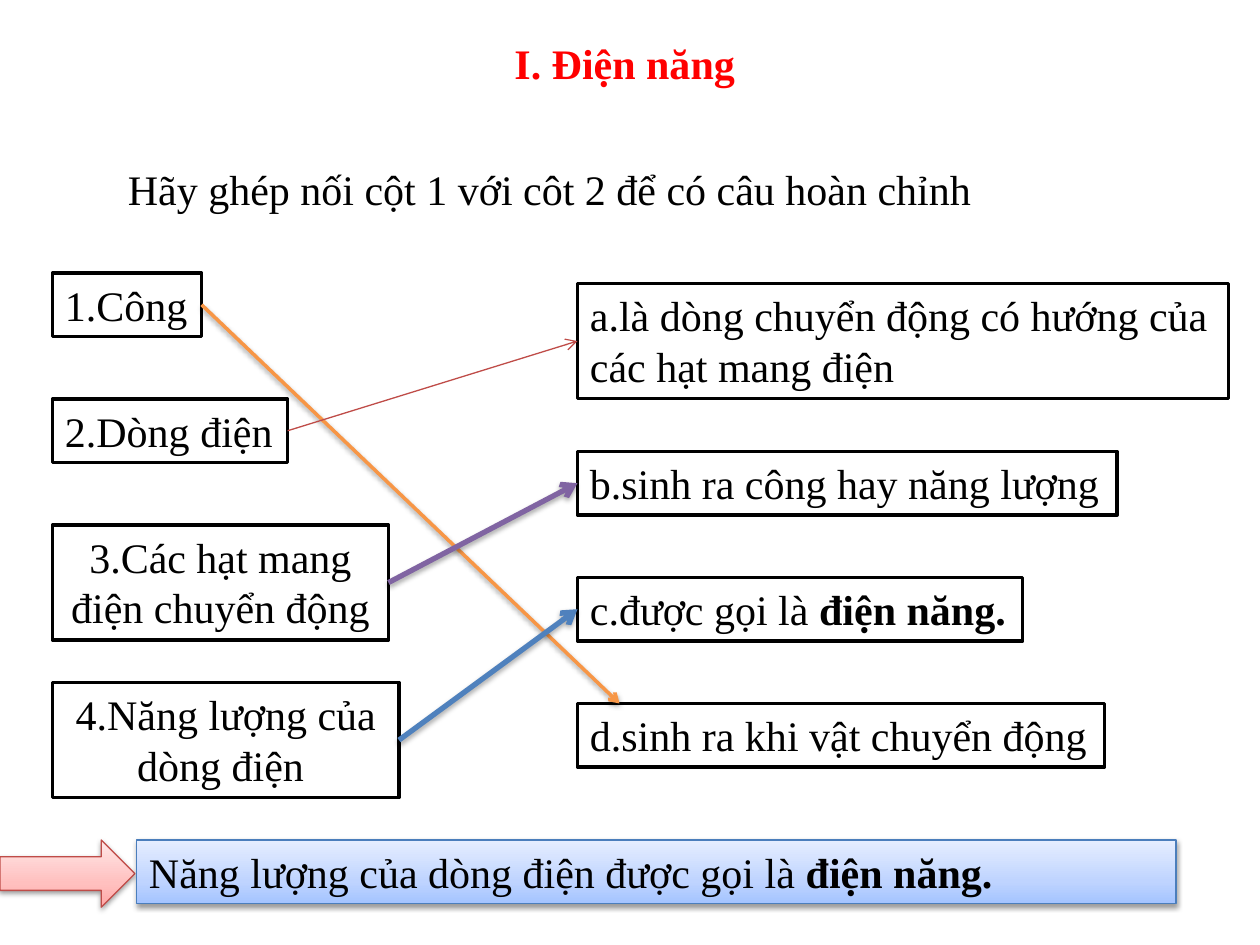
from lxml import etree
from pptx import Presentation
from pptx.dml.color import RGBColor
from pptx.enum.shapes import MSO_CONNECTOR, MSO_SHAPE
from pptx.enum.text import MSO_ANCHOR, MSO_AUTO_SIZE, PP_ALIGN
from pptx.oxml import parse_xml
from pptx.oxml.ns import nsdecls, qn
from pptx.util import Inches, Pt

RECTANGLE, RIGHT_ARROW = MSO_SHAPE.RECTANGLE, MSO_SHAPE.RIGHT_ARROW
STRAIGHT = MSO_CONNECTOR.STRAIGHT
LEFT, CENTER = PP_ALIGN.LEFT, PP_ALIGN.CENTER
TOP, GROW = MSO_ANCHOR.TOP, MSO_AUTO_SIZE.SHAPE_TO_FIT_TEXT
LEFT_SIDE, RIGHT_SIDE = 1, 3

THEME = {
    "font": "Times New Roman", "size": Pt(24),
    "text": RGBColor.from_string("000000"),
    "title": RGBColor.from_string("FF0000"),
    "paper": RGBColor.from_string("FFFFFF"),
    "red": RGBColor.from_string("BF4C48"),
    "blue_edge": RGBColor.from_string("4B7EBC"),
    "orange": RGBColor.from_string("F79646"),
    "purple": RGBColor.from_string("8064A2"),
    "blue": RGBColor.from_string("4F81BD"),
    "red_fade": ("FFA6A5", "FFC0BF", "FFE7E7"),
    "blue_fade": ("A4C4FF", "BFD4FF", "E6EEFF"),
}

deck = Presentation()
deck.slide_width, deck.slide_height = Inches(10), Inches(7.5)
page = deck.slides.add_slide(deck.slide_layouts[6])
UNIT = deck.slide_width // 120  # grid of 120 columns by 90 rows
ONE_LINE, TWO_LINES = 6.05, 10.97  # box heights in rows


def write(box, text, bold_text="", align=LEFT, wrap=True, color=THEME["text"], bold=None):
    frame = box.text_frame
    frame.word_wrap, frame.auto_size, frame.vertical_anchor = wrap, GROW, TOP
    para = frame.paragraphs[0]
    para.alignment = align
    para.font.name, para.font.size = THEME["font"], THEME["size"]
    para.font.color.rgb, para.font.bold = color, bold
    para.add_run().text = text
    if bold_text:
        span = para.add_run()
        span.text, span.font.bold = bold_text, True


def set_shadow(shape, opacity=0, distance=1.6):
    """Give the shape a soft shadow below it, or none at zero opacity."""
    properties = shape._element.spPr
    effects = etree.SubElement(properties, qn("a:effectLst"))
    if opacity:
        effects.append(parse_xml(
            f'<a:outerShdw {nsdecls("a")} blurRad="{Pt(3.1)}" dist="{Pt(distance)}" '
            f'dir="5400000" rotWithShape="0"><a:srgbClr val="000000">'
            f'<a:alpha val="{opacity * 1000}"/></a:srgbClr></a:outerShdw>'))


# Title and task
title = page.shapes.add_textbox(33 * UNIT, 3 * UNIT, 54 * UNIT, 6 * UNIT)
write(title, "I. Điện năng ", align=CENTER, color=THEME["title"], bold=True)
task = page.shapes.add_textbox(11 * UNIT, 15 * UNIT, int(83.4 * UNIT), 6 * UNIT)
write(task, "Hãy ghép nối cột 1 với côt 2 để có câu hoàn chỉnh", wrap=False)

# Two columns of boxes to match: key, column, row, width, height, text, bold text, align
boxes = {}
for key, column, row, width, height, text, bold_text, align in (
    ("1", 5, 26, 14.2, ONE_LINE, "1.Công", "", LEFT),
    ("2", 5, 38, 22.4, ONE_LINE, "2.Dòng điện", "", LEFT),
    ("3", 5, 50, 32, TWO_LINES, "3.Các hạt mang điện chuyển động", "", CENTER),
    ("4", 5, 65, 33, TWO_LINES, "4.Năng lượng của dòng điện ", "", CENTER),
    ("a", 55, 27, 62, TWO_LINES, "a.là dòng chuyển động có hướng của các hạt mang điện", "", LEFT),
    ("d", 55, 67, 50.2, ONE_LINE, "d.sinh ra khi vật chuyển động", "", LEFT),
    ("b", 55, 43, 51.4, ONE_LINE, "b.sinh ra công hay năng lượng", "", LEFT),
    ("c", 55, 55, 42.4, ONE_LINE, "c.được gọi là ", "điện năng.", LEFT),
):
    box = page.shapes.add_shape(
        RECTANGLE, column * UNIT, row * UNIT, int(width * UNIT), int(height * UNIT))
    box.fill.solid()
    box.fill.fore_color.rgb = THEME["paper"]
    box.line.color.rgb, box.line.width = THEME["text"], Pt(2)
    set_shadow(box)
    write(box, text, bold_text, align, wrap=height == TWO_LINES)
    boxes[key] = box

# Conclusion: block arrow and banner
for kind, column, width, height, fade, edge, text, bold_text in (
    (RIGHT_ARROW, 0, 12.85, 6.4, "red_fade", "red", "", ""),
    (RECTANGLE, 13, 99, ONE_LINE, "blue_fade", "blue_edge",
     "Năng lượng của dòng điện được gọi là ", "điện năng."),
):
    shape = page.shapes.add_shape(
        kind, column * UNIT, 80 * UNIT, int(width * UNIT), int(height * UNIT))
    stops = "".join(
        f'<a:gs pos="{place * 1000}"><a:srgbClr val="{color}"/></a:gs>'
        for place, color in zip((0, 35, 100), THEME[fade]))
    shape._element.spPr.append(parse_xml(
        f'<a:gradFill {nsdecls("a")} rotWithShape="1"><a:gsLst>{stops}</a:gsLst>'
        f'<a:lin ang="16200000" scaled="1"/></a:gradFill>'))
    shape.line.color.rgb, shape.line.width = THEME[edge], Pt(0.75)
    set_shadow(shape, 38)
    if text:
        write(shape, text, bold_text)

# Matching arrows; the one to box d lands on its top edge, off centre
for start, end, color, weight, opacity, distance in (
    ("1", "d", "orange", 2, 38, 1.6),
    ("2", "a", "red", 0.75, 0, 0),
    ("3", "b", "purple", 3, 35, 1.8),
    ("4", "c", "blue", 3, 35, 1.8),
):
    arrow = page.shapes.add_connector(STRAIGHT, 0, 0, 59 * UNIT, 67 * UNIT)
    arrow.begin_connect(boxes[start], RIGHT_SIDE)
    if end != "d":
        arrow.end_connect(boxes[end], LEFT_SIDE)
    arrow.line.color.rgb, arrow.line.width = THEME[color], Pt(weight)
    etree.SubElement(arrow.line._get_or_add_ln(), qn("a:tailEnd"), type="arrow")
    set_shadow(arrow, opacity, distance)

deck.save("out.pptx")
